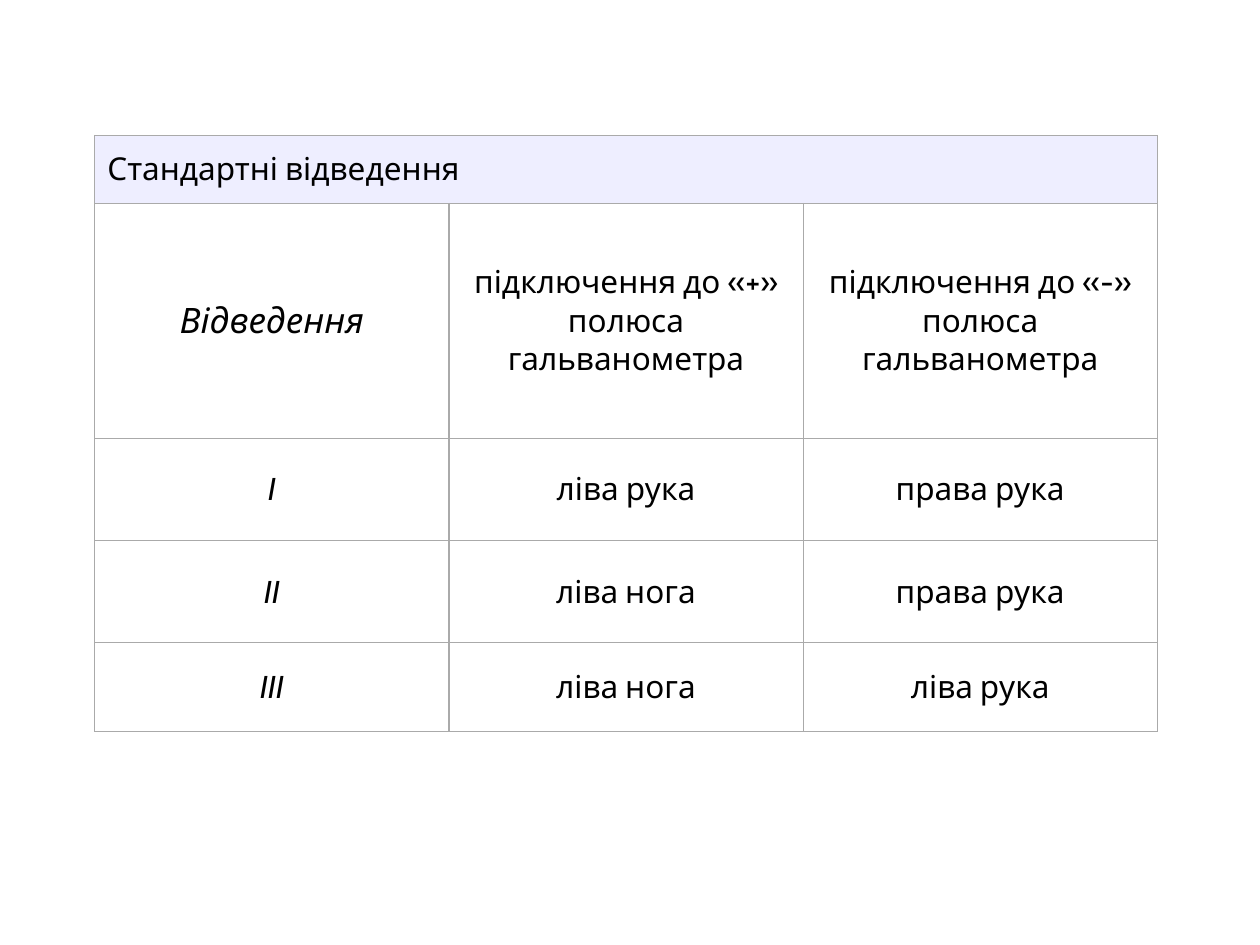
import pptx
import pptx.dml.color
import pptx.enum.text
import pptx.oxml
import pptx.oxml.ns
import pptx.util
from pptx.util import Cm

RGBColor = pptx.dml.color.RGBColor
BLACK = RGBColor(0x00, 0x00, 0x00)
WHITE = RGBColor(0xFF, 0xFF, 0xFF)
LILAC = RGBColor(0xEE, 0xEE, 0xFF)
GREY = RGBColor(0xAA, 0xAA, 0xAA)

ALIGN = pptx.enum.text.PP_ALIGN
MIDDLE = pptx.enum.text.MSO_ANCHOR.MIDDLE

TITLE = "Стандартні відведення"
HEADS = ["Відведення"] + [
    f"підключення до «{sign}» полюса гальванометра" for sign in "+-"
]
LEADS = [
    ["I", "ліва рука", "права рука"],
    ["II", "ліва нога", "права рука"],
    ["III", "ліва нога", "ліва рука"],
]
HEIGHTS = [1.37, 4.74, 2.06, 2.06, 1.78]
WIDTH = 7.14


def write(frame, text, font="Cabin", size=18, color=BLACK, italic=False,
          align=ALIGN.CENTER):
    para = frame.paragraphs[0]
    para.alignment = align
    run = para.add_run()
    run.text = text
    run.font.name = font
    run.font.size = pptx.util.Pt(size)
    run.font.color.rgb = color
    run.font.italic = italic


class Deck:
    def __init__(self, show, line=GREY, weight=0.75):
        self.slide = show.slides.add_slide(show.slide_layouts[6])
        self.line = line
        self.weight = pptx.util.Pt(weight)

    def table(self, left, top, widths, heights):
        frame = self.slide.shapes.add_table(
            len(heights), len(widths), Cm(left), Cm(top),
            Cm(sum(widths)), Cm(sum(heights)))
        grid = frame.table
        for col, width in zip(grid.columns, widths):
            col.width = Cm(width)
        for row, height in zip(grid.rows, heights):
            row.height = Cm(height)
        for cell in grid.iter_cells():
            self.border(cell)
        return grid

    def border(self, cell):
        props = cell._tc.get_or_add_tcPr()
        for side in "LRTB":
            props.append(pptx.oxml.parse_xml(
                f'<a:ln{side} {pptx.oxml.ns.nsdecls("a")} w="{self.weight}">'
                f'<a:solidFill><a:srgbClr val="{self.line}"/></a:solidFill>'
                f'</a:ln{side}>'))

    def cell(self, cell, text, fill=WHITE, **style):
        cell.fill.solid()
        cell.fill.fore_color.rgb = fill
        cell.vertical_anchor = MIDDLE
        write(cell.text_frame, text, **style)


def main():
    show = pptx.Presentation()
    show.slide_width, show.slide_height = Cm(25.4), Cm(19.05)
    deck = Deck(show)
    grid = deck.table(1.91, 2.73, [WIDTH] * 3, HEIGHTS)
    grid.cell(0, 0).merge(grid.cell(0, 2))
    deck.cell(grid.cell(0, 0), TITLE, fill=LILAC, align=ALIGN.LEFT)
    for row, texts in enumerate([HEADS] + LEADS, 1):
        for col, text in enumerate(texts):
            size = 20 if (row, col) == (1, 0) else 18
            deck.cell(grid.cell(row, col), text, size=size, italic=col == 0)
    show.save("out.pptx")


if __name__ == "__main__":
    main()
